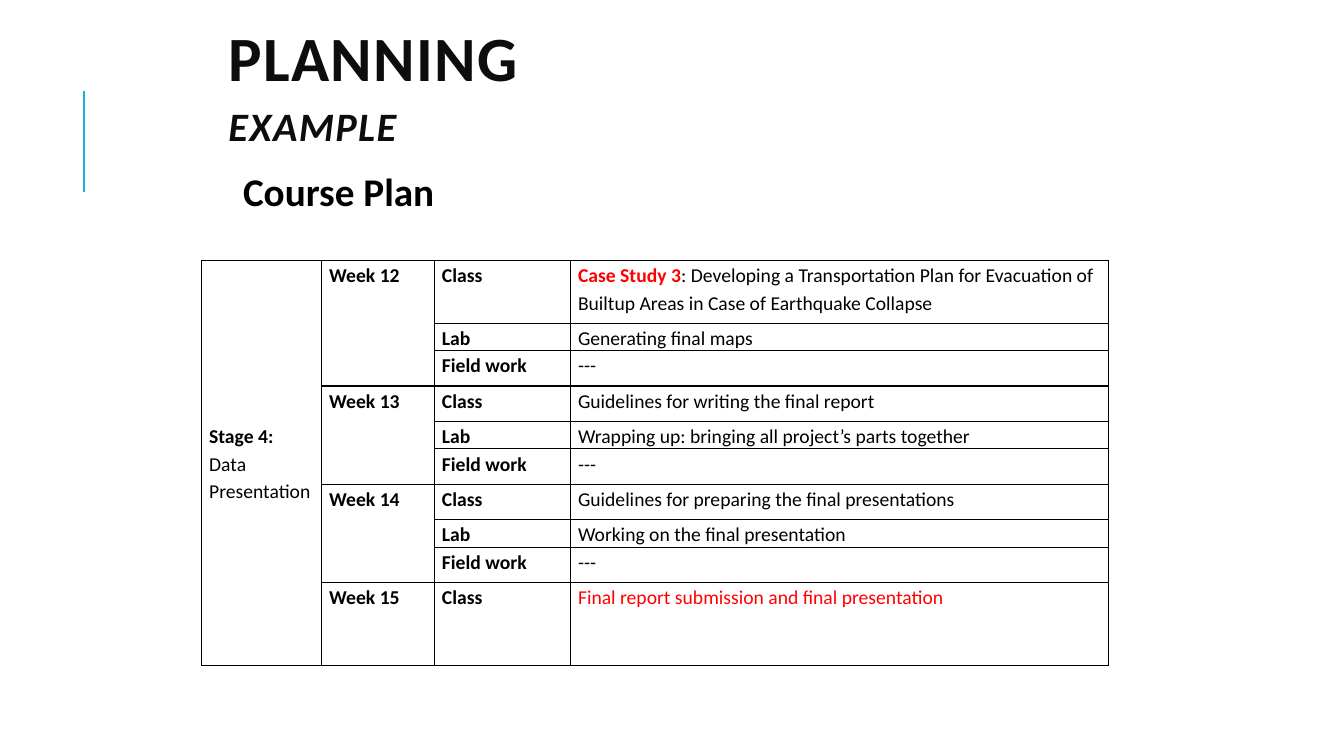
from lxml.etree import SubElement
from pptx import Presentation
from pptx.dml.color import RGBColor
from pptx.enum.shapes import MSO_CONNECTOR
from pptx.enum.text import MSO_ANCHOR, MSO_AUTO_SIZE, PP_ALIGN
from pptx.oxml.ns import qn
from pptx.util import Pt

COLORS = {
    "accent": "1CADE4",
    "title": "0D0D0D",
    "text": "000000",
    "highlight": "FF0000",
    "cell": "FFFFFF",
}
FONT = "Calibri"
COLUMN_WIDTHS = [85.7, 80.6, 97.2, 384.5]
CLASS_HEIGHT, LAB_HEIGHT, FIELD_HEIGHT = 25.3, 19.4, 25.3
FIRST_HEIGHT, LAST_HEIGHT = 44.8, 59.2

WEEKS = [
    ("Week 12", [
        ("Class", [
            ("Case Study 3", True, "highlight"),
            (": Developing a Transportation Plan for Evacuation of Builtup Areas "
             "in Case of Earthquake Collapse", False, "text"),
        ]),
        ("Lab", [("Generating final maps", False, "text")]),
        ("Field work", [("---", False, "text")]),
    ]),
    ("Week 13", [
        ("Class", [("Guidelines for writing the final report", False, "text")]),
        ("Lab", [("Wrapping up: bringing all project’s parts together", False, "text")]),
        ("Field work", [("---", False, "text")]),
    ]),
    ("Week 14", [
        ("Class", [("Guidelines for preparing the final presentations", False, "text")]),
        ("Lab", [("Working on the final presentation", False, "text")]),
        ("Field work", [("---", False, "text")]),
    ]),
    ("Week 15", [
        ("Class", [("Final report submission and final presentation", False, "highlight")]),
    ]),
]


def rgb(name):
    return RGBColor.from_string(COLORS[name])


def add_run(paragraph, text, size, bold=True, color="text", italic=False):
    run = paragraph.add_run()
    run.text = text
    font = run.font
    font.name, font.size, font.bold, font.italic = FONT, Pt(size), bold, italic
    font.color.rgb = rgb(color)
    return run


def add_title(slide):
    title = slide.shapes.title
    title.left, title.top, title.width, title.height = Pt(156), Pt(21.6), Pt(648), Pt(90)
    frame = title.text_frame
    frame.word_wrap = True
    frame.auto_size = MSO_AUTO_SIZE.NONE
    frame.vertical_anchor = MSO_ANCHOR.MIDDLE
    heading = frame.paragraphs[0]
    heading.alignment = PP_ALIGN.LEFT
    heading.line_spacing = 0.8
    runs = [add_run(heading, "PLANNING ", 45, color="title")]
    heading.add_line_break()
    runs.append(add_run(heading, "EXAMPLE", 28.8, color="title", italic=True))
    runs.append(add_run(heading, " ", 45, color="title"))
    for run in runs:
        run.font._element.set("spc", "100")


def add_accent_line(slide):
    accent = slide.shapes.add_connector(
        MSO_CONNECTOR.STRAIGHT, Pt(60), Pt(136.8), Pt(60), Pt(64.8))
    accent.line.color.rgb = rgb("accent")
    accent.line.width = Pt(1.5)
    SubElement(accent._element.spPr, qn("a:effectLst"))


def add_subtitle(slide):
    subtitle = slide.shapes.add_textbox(Pt(166.5), Pt(116), Pt(152.6), Pt(41))
    frame = subtitle.text_frame
    frame.word_wrap = False
    frame.auto_size = MSO_AUTO_SIZE.SHAPE_TO_FIT_TEXT
    add_run(frame.paragraphs[0], "Course Plan", 28)


def add_borders(cell):
    properties = cell._tc.get_or_add_tcPr()
    for side in ("lnL", "lnR", "lnT", "lnB"):
        border = SubElement(properties, qn(f"a:{side}"), w=str(Pt(1)))
        fill = SubElement(border, qn("a:solidFill"))
        SubElement(fill, qn("a:srgbClr"), val=COLORS["text"])


def format_cell(cell, filled):
    cell.margin_left = cell.margin_right = Pt(5.4)
    cell.margin_top = cell.margin_bottom = 0
    add_borders(cell)
    if filled:
        cell.fill.solid()
        cell.fill.fore_color.rgb = rgb("cell")
    else:
        cell.fill.background()


def write_cell(cell, *paragraphs):
    frame = cell.text_frame
    for index, runs in enumerate(paragraphs):
        paragraph = frame.add_paragraph() if index else frame.paragraphs[0]
        paragraph.line_spacing = 1.15
        for text, bold, color in runs:
            add_run(paragraph, text, 14, bold, color)


def add_course_plan(slide):
    heights = [CLASS_HEIGHT, LAB_HEIGHT, FIELD_HEIGHT] * 3 + [LAST_HEIGHT]
    heights[0] = FIRST_HEIGHT
    plan = slide.shapes.add_table(
        len(heights), len(COLUMN_WIDTHS), Pt(144), Pt(186),
        Pt(sum(COLUMN_WIDTHS)), Pt(sum(heights))).table
    plan.first_row = plan.horz_banding = False
    for column, width in zip(plan.columns, COLUMN_WIDTHS):
        column.width = Pt(width)
    for row, height in zip(plan.rows, heights):
        row.height = Pt(height)
        for index, cell in enumerate(row.cells):
            format_cell(cell, filled=index > 1)

    stage = plan.cell(0, 0)
    stage.merge(plan.cell(len(heights) - 1, 0))
    stage.vertical_anchor = MSO_ANCHOR.MIDDLE
    write_cell(stage, [("Stage 4:", True, "text")],
               [("Data Presentation", False, "text")])

    top = 0
    for week, sessions in WEEKS:
        week_cell = plan.cell(top, 1)
        if len(sessions) > 1:
            week_cell.merge(plan.cell(top + len(sessions) - 1, 1))
        write_cell(week_cell, [(week, True, "text")])
        for row, (session, topic) in enumerate(sessions, top):
            write_cell(plan.cell(row, 2), [(session, True, "text")])
            write_cell(plan.cell(row, 3), topic)
        top += len(sessions)


def main():
    deck = Presentation()
    deck.slide_width, deck.slide_height = Pt(960), Pt(540)
    slide = deck.slides.add_slide(deck.slide_layouts[5])
    add_accent_line(slide)
    add_title(slide)
    add_course_plan(slide)
    add_subtitle(slide)
    deck.save("out.pptx")


if __name__ == "__main__":
    main()
